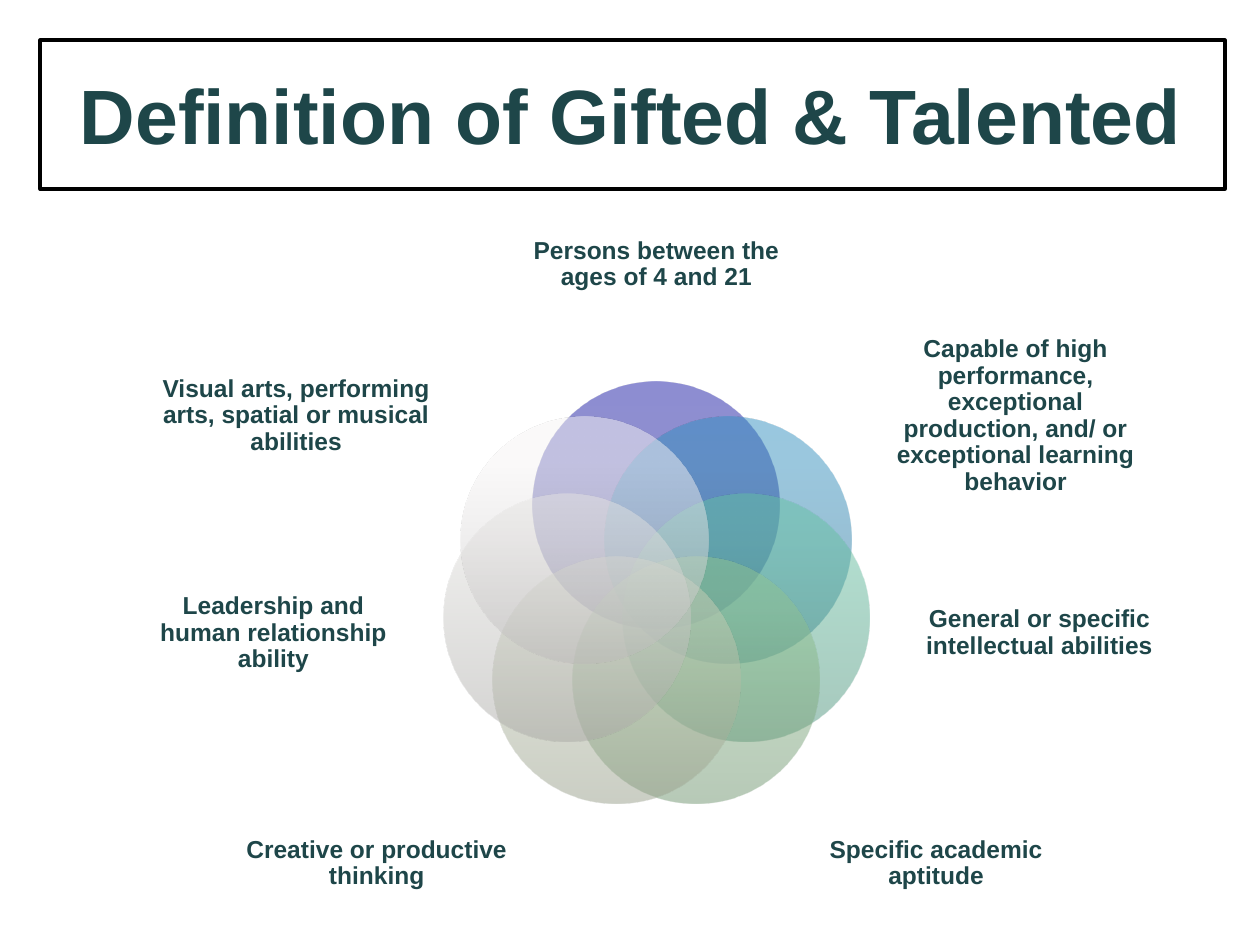
"""Build the slide that defines gifted and talented with a ring of seven circles."""
import math
from typing import Any, NamedTuple

from lxml import etree
from pptx import Presentation
from pptx import util as u
from pptx.dml.color import RGBColor
from pptx.enum import shapes, text
from pptx.oxml.ns import qn

TEAL = RGBColor(0x1E, 0x46, 0x49)
BLACK = RGBColor(0x00, 0x00, 0x00)
RING_X, RING_Y, RING_RADIUS = 5.21, 4.74, 0.73
DIAMETER = 1.96
STOP_POSITIONS = (0, 80, 100)
OPACITY = 50


class Box(NamedTuple):
    left: float
    top: float
    width: float
    height: float


class Trait(NamedTuple):
    label: str
    box: Box
    colors: tuple[RGBColor, ...]


def make_trait(label: str, box: Box, *codes: str) -> Trait:
    """Return a trait with its gradient colours."""
    return Trait(label, box, tuple(RGBColor.from_string(code) for code in codes))


TRAITS = (
    make_trait("Persons between the ages of 4 and 21",
               Box(4.09, 1.5, 2.24, 1.2), "17177C", "1E1EA3", "1B1BA7"),
    make_trait("Capable of high performance, exceptional production, and/ or "
               "exceptional learning behavior",
               Box(7, 2.64, 2.12, 1.32), "296D90", "3691BE", "3391C2"),
    make_trait("General or specific intellectual abilities",
               Box(7.21, 4.32, 2.08, 1.41), "4D917B", "65C0A2", "64C2A4"),
    make_trait("Specific academic aptitude",
               Box(6.31, 6.21, 2.24, 1.29), "6F956F", "92C492", "92C692"),
    make_trait("Creative or productive thinking",
               Box(1.87, 6.21, 2.24, 1.29), "989F8B", "C9D0B8", "CAD2B8"),
    make_trait("Leadership and human relationship ability",
               Box(1.13, 4.32, 2.08, 1.41), "AAA9A6", "DFDEDB", "E1E0DC"),
    make_trait("Visual arts, performing arts, spatial or musical abilities",
               Box(1.29, 2.64, 2.12, 1.32), "BCBABA", "F7F5F5", "F8F6F6"),
)


def set_format(target: Any, values: dict[str, Any]) -> None:
    """Set each named attribute on the target."""
    for name, value in values.items():
        setattr(target, name, value)


def inches(box: Box) -> tuple[u.Length, ...]:
    """Return the box as lengths."""
    return tuple(u.Inches(value) for value in box)


def write_text(shape: Any, wording: str, size: float, margins: tuple[float, float]) -> Any:
    """Write centred bold text into a shape and return its paragraph."""
    side, end = (u.Inches(margin) for margin in margins)
    frame = shape.text_frame
    set_format(frame, {
        "text": wording, "word_wrap": True, "auto_size": text.MSO_AUTO_SIZE.NONE,
        "vertical_anchor": text.MSO_ANCHOR.MIDDLE,
        "margin_left": side, "margin_right": side,
        "margin_top": end, "margin_bottom": end,
    })
    paragraph = frame.paragraphs[0]
    paragraph.alignment = text.PP_ALIGN.CENTER
    font = paragraph.runs[0].font
    set_format(font, {"name": "Arial", "size": u.Pt(size), "bold": True})
    font.color.rgb = TEAL
    return paragraph


def add_title(slide: Any, wording: str, box: Box) -> None:
    """Place and format the title."""
    title = slide.shapes.title
    set_format(title, dict(zip(Box._fields, inches(box))))
    write_text(title, wording, 44, (0.1, 0.05))


def fill_gradient(shape: Any, colors: tuple[RGBColor, ...]) -> None:
    """Fill a shape with a translucent gradient that rises from the bottom."""
    shape.fill.gradient()
    shape.fill.gradient_angle = 90
    stops = shape.element.spPr.find(".//" + qn("a:gsLst"))
    for stop in list(stops):
        stops.remove(stop)
    for position, color in zip(STOP_POSITIONS, colors):
        stop = etree.SubElement(stops, qn("a:gs"), pos=str(position * 1000))
        node = etree.SubElement(stop, qn("a:srgbClr"), val=str(color))
        etree.SubElement(node, qn("a:alpha"), val=str(OPACITY * 1000))


def add_trait(slide: Any, trait: Trait, angle: float) -> None:
    """Draw a circle of the ring and its label."""
    left = RING_X + RING_RADIUS * math.sin(angle) - DIAMETER / 2
    top = RING_Y - RING_RADIUS * math.cos(angle) - DIAMETER / 2
    circle = slide.shapes.add_shape(
        shapes.MSO_SHAPE.OVAL, *inches(Box(left, top, DIAMETER, DIAMETER)))
    circle.shadow.inherit = False
    circle.line.fill.background()
    fill_gradient(circle, trait.colors)
    label = slide.shapes.add_textbox(*inches(trait.box))
    paragraph = write_text(label, trait.label, 14, (0, 0))
    set_format(paragraph, {"line_spacing": 0.9, "space_after": u.Pt(4.9)})


def add_frame(slide: Any, box: Box) -> None:
    """Draw the outline around the title."""
    frame = slide.shapes.add_shape(shapes.MSO_SHAPE.RECTANGLE, *inches(box))
    frame.shadow.inherit = False
    frame.fill.background()
    frame.line.color.rgb = BLACK
    frame.line.width = u.Pt(2.25)


def main() -> None:
    """Build and save the presentation."""
    presentation = Presentation()
    set_format(presentation, {"slide_width": u.Inches(10), "slide_height": u.Inches(7.5)})
    slide = presentation.slides.add_slide(presentation.slide_layouts[5])
    add_title(slide, "Definition of Gifted & Talented", Box(0.31, 0.3, 9.4, 1.2))
    for index, trait in enumerate(TRAITS):
        add_trait(slide, trait, math.tau * index / len(TRAITS))
    add_frame(slide, Box(0.32, 0.32, 9.4, 1.18))
    presentation.save("out.pptx")


if __name__ == "__main__":
    main()
